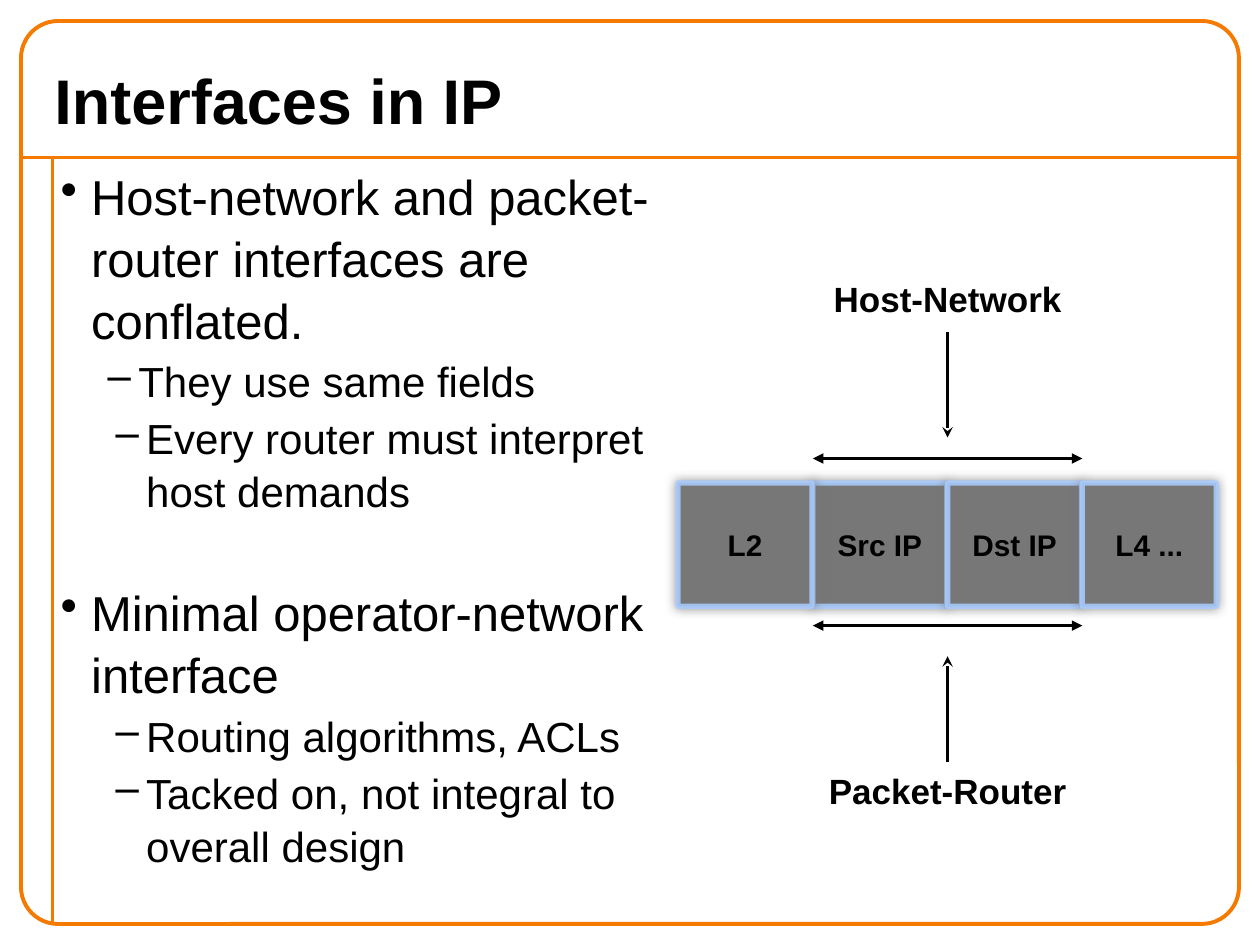
from pptx import Presentation
from pptx.dml.color import RGBColor
from pptx.enum.shapes import MSO_CONNECTOR as Connector, MSO_SHAPE as Shape
from pptx.enum.text import MSO_ANCHOR as Anchor, PP_ALIGN as Align
from pptx.oxml.ns import qn
from pptx.util import Pt
from lxml.etree import SubElement

ORANGE = RGBColor(0xF4, 0x7A, 0x00)
BLACK = RGBColor(0x00, 0x00, 0x00)
GRAY = RGBColor(0x77, 0x77, 0x77)
PALE_BLUE = RGBColor(0xA9, 0xCC, 0xFF)

BULLETS = [
    ("Host-network and packet-router interfaces are conflated.", "•", 28, 45, 0),
    ("They use same fields", "–", 24, 72, 2.4),
    ("Every router must interpret host demands", "–", 24, 76.5, 2.4),
    ("Minimal operator-network interface", "•", 28, 45, 36.5),
    ("Routing algorithms, ACLs", "–", 24, 76.5, 2.4),
    ("Tacked on, not integral to overall design", "–", 24, 76.5, 2.4),
]
FIELDS = ["L2", "Src IP", "Dst IP", "L4 ..."]
FIELD_LEFT, FIELD_TOP, FIELD_PITCH = 387.5, 276, 77
FIELD_WIDTH, FIELD_HEIGHT = 76.5, 70.5


class SlideBuilder:
    font = "Arial"

    def __init__(self, slide):
        self.slide = slide

    def style(self, paragraph, size, bold=True):
        for run in paragraph.runs:
            run.font.name = self.font
            run.font.size = Pt(size)
            run.font.bold = bold
            run.font.color.rgb = BLACK

    def frame(self, left, top, width, height, rounding):
        shape = self.slide.shapes.add_shape(
            Shape.ROUNDED_RECTANGLE, Pt(left), Pt(top), Pt(width), Pt(height))
        shape.adjustments[0] = rounding
        shape.shadow.inherit = False
        shape.fill.background()
        shape.line.color.rgb = ORANGE
        shape.line.width = Pt(2.25)

    def line(self, start, end, color=BLACK, width=2, head=None, tail=None):
        connector = self.slide.shapes.add_connector(
            Connector.STRAIGHT, *map(Pt, start + end))
        connector.line.color.rgb = color
        connector.line.width = Pt(width)
        for tag, kind in (("a:headEnd", head), ("a:tailEnd", tail)):
            if kind:
                SubElement(connector.line._get_or_add_ln(), qn(tag), type=kind)
        SubElement(connector._element.spPr, qn("a:effectLst"))

    def text_box(self, left, top, width, height, wrap=True):
        box = self.slide.shapes.add_textbox(
            Pt(left), Pt(top), Pt(width), Pt(height))
        box.text_frame.word_wrap = wrap
        return box.text_frame

    def title(self, text, left, top, width, height):
        text_frame = self.text_box(left, top, width, height)
        text_frame.vertical_anchor = Anchor.MIDDLE
        text_frame.text = text
        self.style(text_frame.paragraphs[0], 36)

    def bullets(self, items, left, top, width, height):
        text_frame = self.text_box(left, top, width, height)
        text_frame.text = "\n".join(item[0] for item in items)
        for paragraph, item in zip(text_frame.paragraphs, items):
            _, bullet, size, margin, space = item
            paragraph.line_spacing = 1.05
            paragraph.space_before = Pt(space)
            self.style(paragraph, size, bold=False)
            properties = paragraph._p.get_or_add_pPr()
            properties.set("marL", str(Pt(margin)))
            properties.set("indent", str(Pt(-17.5)))
            SubElement(properties, qn("a:buChar"), char=bullet)

    def centered(self, text_frame, text, size):
        text_frame.margin_left = text_frame.margin_right = 0
        text_frame.margin_top = text_frame.margin_bottom = 0
        text_frame.vertical_anchor = Anchor.MIDDLE
        text_frame.text = text
        paragraph = text_frame.paragraphs[0]
        paragraph.alignment = Align.CENTER
        self.style(paragraph, size)

    def label(self, text, center, top, width):
        text_frame = self.text_box(center - width / 2, top, width, 24.5, wrap=False)
        self.centered(text_frame, text, 20)

    def field(self, text, left):
        shape = self.slide.shapes.add_shape(
            Shape.RECTANGLE, Pt(left), Pt(FIELD_TOP), Pt(FIELD_WIDTH), Pt(FIELD_HEIGHT))
        shape.shadow.inherit = False
        shape.fill.solid()
        shape.fill.fore_color.rgb = GRAY
        shape.line.color.rgb = PALE_BLUE
        shape.line.width = Pt(3)
        properties = shape._element.spPr
        line_color = properties.find(qn("a:ln")).find(".//" + qn("a:srgbClr"))
        SubElement(line_color, qn("a:alpha"), val="85000")
        shadow = SubElement(
            properties.find(qn("a:effectLst")), qn("a:outerShdw"),
            blurRad=str(Pt(6)), dist="0", dir="0", rotWithShape="0")
        shadow_color = SubElement(shadow, qn("a:srgbClr"), val=str(GRAY))
        SubElement(shadow_color, qn("a:alpha"), val="80000")
        self.centered(shape.text_frame, text, 17)


def main():
    presentation = Presentation()
    presentation.slide_width, presentation.slide_height = Pt(720), Pt(540)
    builder = SlideBuilder(
        presentation.slides.add_slide(presentation.slide_layouts[6]))

    builder.line((12, 90), (708, 90), ORANGE, 2.25)
    builder.line((30, 90), (30, 528), ORANGE, 2.25)
    builder.frame(12, 12, 696, 516, 0.041)
    builder.title("Interfaces in IP", 24, 30, 696, 54)
    builder.bullets(BULLETS, 0, 90, 390, 431)

    span_left = FIELD_LEFT + FIELD_PITCH
    center = span_left + FIELD_PITCH
    span_right = center + FIELD_PITCH
    for text, label_top, width, start, end, span in (
            ("Host-Network", 158.5, 131, 189.5, 250, 262),
            ("Packet-Router", 439.5, 137.5, 435.5, 375, 357.5)):
        builder.label(text, center, label_top, width)
        builder.line((center, start), (center, end), tail="stealth")
        builder.line((span_left, span), (span_right, span),
                     head="triangle", tail="triangle")

    for index in (1, 2, 3, 0):
        builder.field(FIELDS[index], FIELD_LEFT + index * FIELD_PITCH)

    presentation.save("out.pptx")


if __name__ == "__main__":
    main()
